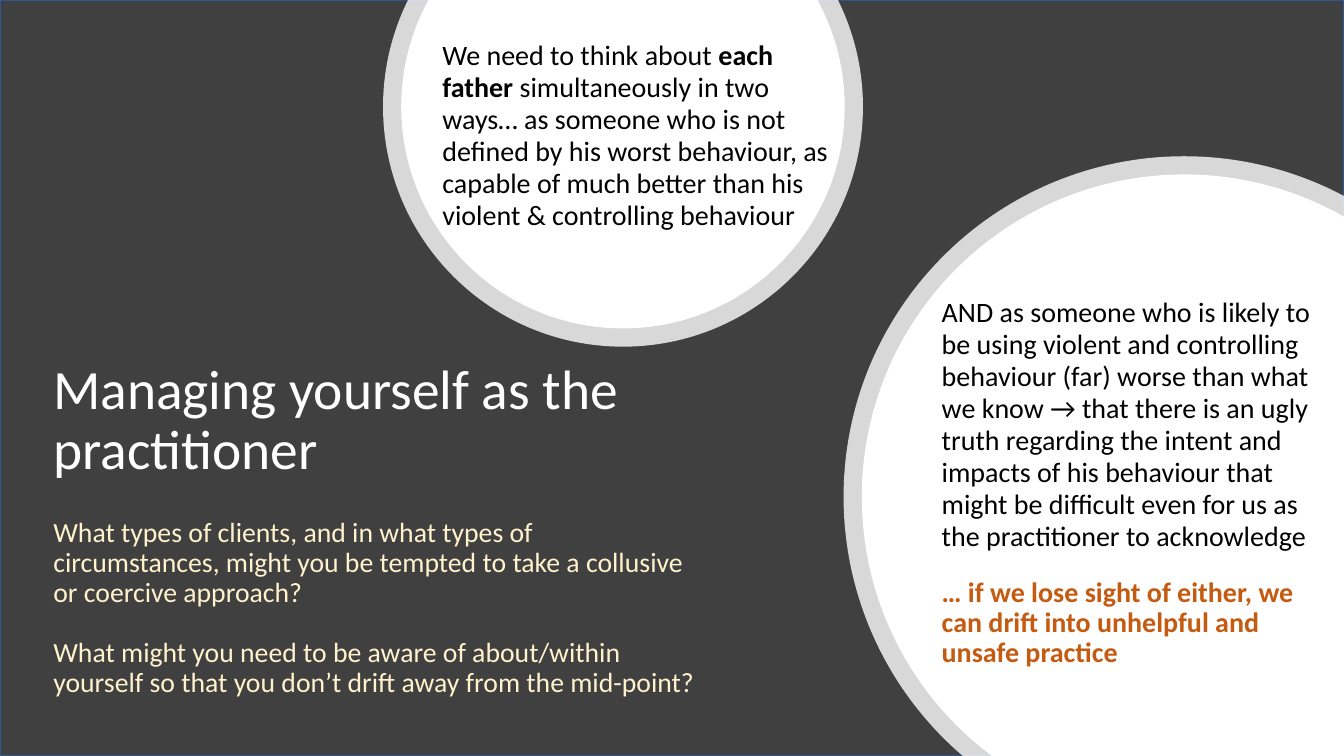
"""Build the slide on how practitioners manage themselves when working with fathers."""
from math import acos, asin, cos, degrees, radians, sin, tan

from lxml import etree
from pptx import Presentation
from pptx.dml.color import RGBColor
from pptx.enum import shapes, text
from pptx.oxml.ns import qn
from pptx.util import Pt

W, H = 960, 540
COLORS = {
    "back": "404040", "edge": "325491", "white": "FFFFFF",
    "cream": "FFF2CC", "black": "000000", "orange": "C55A11",
}


def add_disc(s, cx, cy, radius, start, end, corners, alpha):
    """Add a white disc: a clockwise arc closed along the slide edges."""
    stops = [start, *[a for a in (0, 90, 180, 270) if start < a < end], end]
    points = [(cx + radius * cos(radians(start)), cy + radius * sin(radians(start)))]
    for a, b in zip(stops, stops[1:]):
        a, b = radians(a), radians(b)
        k = 4 / 3 * tan((b - a) / 4)
        points += [
            (cx + radius * (cos(a) - k * sin(a)), cy + radius * (sin(a) + k * cos(a))),
            (cx + radius * (cos(b) + k * sin(b)), cy + radius * (sin(b) - k * cos(b))),
            (cx + radius * cos(b), cy + radius * sin(b)),
        ]
    points = [(Pt(x), Pt(y)) for x, y in points + corners]
    builder = s.shapes.build_freeform(*points[0])
    builder.add_line_segments(points[1:], close=True)
    sp = builder.convert_to_shape()
    lines = list(sp._element.iter(qn("a:lnTo")))
    for i in range(0, 3 * (len(stops) - 1), 3):
        curve = etree.Element(qn("a:cubicBezTo"))
        lines[i].addprevious(curve)
        for line in lines[i:i + 3]:
            curve.append(line[0])
            line.getparent().remove(line)
    sp.shadow.inherit = False
    sp.fill.solid()
    sp.fill.fore_color.rgb = RGBColor.from_string(COLORS["white"])
    sp.line.fill.background()
    if alpha < 100:
        color = sp.fill._xPr.find(qn("a:solidFill"))[0]
        etree.SubElement(color, qn("a:alpha"), val=str(alpha * 1000))


def add_text(s, box, anchor, paragraphs):
    """Add a text box; a paragraph is (size, color, line spacing, space after, runs)."""
    tf = s.shapes.add_textbox(*[Pt(v) for v in box]).text_frame
    tf.word_wrap = True
    tf.vertical_anchor = anchor
    for i, (size, color, spacing, after, runs) in enumerate(paragraphs):
        p = tf.add_paragraph() if i else tf.paragraphs[0]
        p.line_spacing = spacing
        p.space_after = Pt(after)
        for wording, bold in runs:
            r = p.add_run()
            r.text = wording
            r.font.name = "Calibri"
            r.font.size = Pt(size)
            r.font.bold = bold
            r.font.color.rgb = RGBColor.from_string(COLORS[color])
    return tf


prs = Presentation()
prs.slide_width, prs.slide_height = Pt(W), Pt(H)
s = prs.slides.add_slide(prs.slide_layouts[6])

back = s.shapes.add_shape(shapes.MSO_SHAPE.RECTANGLE, 0, 0, Pt(W), Pt(H))
back.shadow.inherit = False
back.fill.solid()
back.fill.fore_color.rgb = RGBColor.from_string(COLORS["back"])
back.line.color.rgb = RGBColor.from_string(COLORS["edge"])
back.line.width = Pt(1)

for rim, alpha in [(13, 80), (0, 100)]:
    cx, cy, radius = 445, 76.2, 158.4 + rim
    cut = degrees(asin(cy / radius))
    add_disc(s, cx, cy, radius, -cut, 180 + cut, [], alpha)

    cx, cy, radius = 846, 355, 230.4 + rim
    start = 180 - degrees(asin((H - cy) / radius))
    end = 360 - degrees(acos((W - cx) / radius))
    add_disc(s, cx, cy, radius, start, end, [(W, H)], alpha)

title = add_text(s, (31, 250, 476.6, 249), text.MSO_ANCHOR.BOTTOM, [
    (39.6, "white", 0.9, 26.2, [("Managing yourself as the practitioner", False)]),
    (19.8, "cream", 0.9, 21.7, [
        ("What types of clients, and in what types of circumstances, might you be "
         "tempted to take a collusive or coercive approach?", False)]),
    (19.8, "cream", 0.9, 0, [
        ("What might you need to be aware of about/within yourself so that you "
         "don’t drift away from the mid-point?", False)]),
])
title.margin_bottom = 0

father = add_text(s, (308.9, 27.4, 293.8, 172.8), text.MSO_ANCHOR.TOP, [
    (20, "black", 0.95, 12, [
        ("We need to think about ", False),
        ("each father", True),
        (" simultaneously in two ways… as someone who is not defined by his worst "
         "behaviour, as capable of much better than his violent & controlling "
         "behaviour", False)]),
])
father.margin_top = Pt(1)

add_text(s, (665.6, 178.9, 285.1, 331.9), text.MSO_ANCHOR.MIDDLE, [
    (20, "black", 0.95, 18, [
        ("AND as someone who is likely to be using violent and controlling behaviour "
         "(far) worse than what we know → that there is an ugly truth regarding the "
         "intent and impacts of his behaviour that might be difficult even for us as "
         "the practitioner to acknowledge", False)]),
    (20, "orange", 0.9, 6, [
        ("… if we lose sight of either, we can drift into unhelpful and unsafe "
         "practice", True)]),
])

prs.save("out.pptx")
